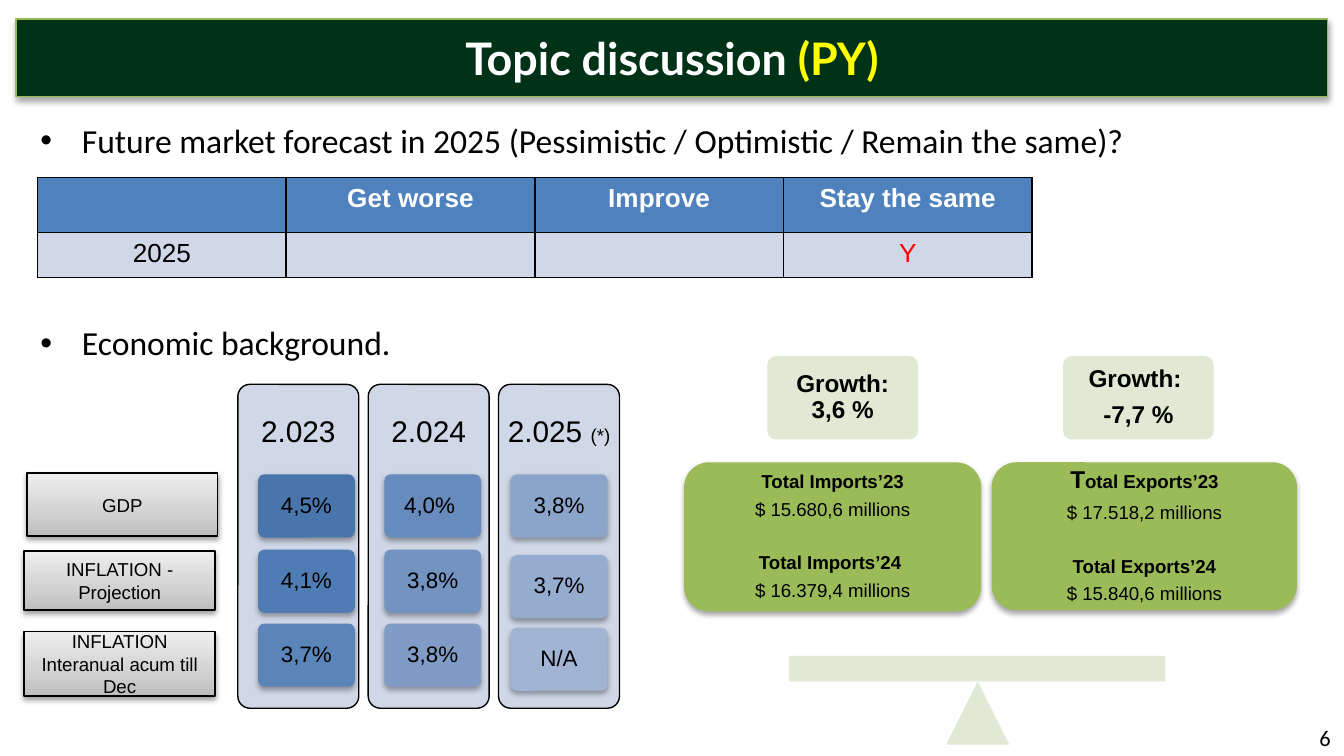
import pptx
import pptx.dml.color
import pptx.enum.shapes
import pptx.enum.text
import pptx.oxml
import pptx.oxml.ns
import pptx.util
import copy
from lxml import etree

RGB = pptx.dml.color.RGBColor
Pt = pptx.util.Pt
qn = pptx.oxml.ns.qn
KIND = pptx.enum.shapes.MSO_SHAPE
ALIGN = pptx.enum.text.PP_ALIGN
ANCHOR = pptx.enum.text.MSO_ANCHOR

PX = 9144  # 100 px to the inch
BLACK = RGB(0, 0, 0)
WHITE = RGB(255, 255, 255)
YELLOW = RGB(255, 255, 0)
RED = RGB(255, 0, 0)
DARK_GREEN = RGB(0x00, 0x32, 0x17)
EDGE_GREEN = RGB(0x98, 0xB9, 0x55)
PAN_GREEN = RGB(0x9B, 0xBB, 0x59)
PALE_GREEN = RGB(0xDE, 0xE7, 0xD1)
HEADER_BLUE = RGB(0x4F, 0x81, 0xBD)
PALE_BLUE = RGB(0xD0, 0xD8, 0xE8)
LABEL_GREYS = [RGB(0xBD, 0xBD, 0xBD), RGB(0xD1, 0xD1, 0xD1), RGB(0xEE, 0xEE, 0xEE)]


def add_run(paragraph, text, size=10, color=BLACK, bold=False, name="Arial"):
    run = paragraph.add_run()
    run.text = text
    for key, value in {"size": Pt(size), "bold": bold, "name": name}.items():
        setattr(run.font, key, value)
    run.font.color.rgb = color


def add_box(kind, at, fill, line=None, inset=5, corner=None):
    """Add a preset shape with middle-anchored, centred text and no shadow."""
    box = slide.shapes.add_shape(kind, *[v * PX for v in at])
    box.shadow.inherit = False
    if corner:
        box.adjustments[0] = corner
    box.fill.solid()
    box.fill.fore_color.rgb = fill
    if line is None:
        box.line.fill.background()
    else:
        box.line.color.rgb = line
        box.line.width = Pt(0.75)
    frame = box.text_frame
    frame.word_wrap = True
    frame.vertical_anchor = ANCHOR.MIDDLE
    for side in ("left", "top", "right", "bottom"):
        setattr(frame, "margin_" + side, inset * PX)
    frame.paragraphs[0].alignment = ALIGN.CENTER
    return box


deck = pptx.Presentation()
deck.slide_width = 1000 * PX
deck.slide_height = deck.slide_width * 9 // 16
slide = deck.slides.add_slide(deck.slide_layouts[1])
title, topics = slide.placeholders
for holder, at in ((title, (12, 14, 976, 58)), (topics, (20, 84, 961, 613))):
    holder.left, holder.top, holder.width, holder.height = [v * PX for v in at]
    holder.text_frame.auto_size = pptx.enum.text.MSO_AUTO_SIZE.NONE
shadowed = [(title, 35, 1.8)]

# Title bar
title.fill.solid()
title.fill.fore_color.rgb = DARK_GREEN
title.line.color.rgb = EDGE_GREEN
title.line.width = Pt(0.75)
heading = title.text_frame
heading.vertical_anchor = ANCHOR.MIDDLE
for side in ("left", "top", "right", "bottom"):
    setattr(heading, "margin_" + side, 0)
heading.paragraphs[0].alignment = ALIGN.CENTER
for text, color in (("Topic discussion ", WHITE), ("(PY)", YELLOW)):
    add_run(heading.paragraphs[0], text, 24, color, True, "Lato")

# Topics
topics.text_frame.vertical_anchor = ANCHOR.TOP
for i, (text, gap) in enumerate((
        ("Future market forecast in 2025 (Pessimistic / Optimistic / Remain the same)?", 0),
        ("Economic background.", 87))):
    topic = topics.text_frame.add_paragraph() if i else topics.text_frame.paragraphs[0]
    topic.space_before = Pt(gap)
    properties = topic._p.get_or_add_pPr()
    properties.set("marL", str(31 * PX))
    properties.set("indent", str(-31 * PX))
    add_run(topic, text, 18, name="Calibri")

# Page number
page_number = slide.shapes.add_textbox(767 * PX, 534 * PX, 233 * PX, 30 * PX).text_frame
page_number.word_wrap = True
page_number.paragraphs[0].alignment = ALIGN.RIGHT
add_run(page_number.paragraphs[0], "6", 12, name="Calibri")

# Forecast table
forecast = slide.shapes.add_table(2, 4, 28 * PX, 132 * PX, 740 * PX, 74 * PX).table
for column in forecast.columns:
    column.width = 185 * PX
for row, height in zip(forecast.rows, (41, 33)):
    row.height = height * PX
answers = [["", "Get worse", "Improve", "Stay the same"], ["2025", "", "", "Y"]]
for r, row in enumerate(answers):
    for c, text in enumerate(row):
        cell = forecast.cell(r, c)
        entry = cell.text_frame.paragraphs[0]
        entry.alignment = ALIGN.CENTER
        if text:
            color = WHITE if r == 0 else RED if text == "Y" else BLACK
            add_run(entry, text, 14, color, r == 0)
        else:
            etree.SubElement(entry._p, qn("a:endParaRPr"), sz="1400")
        properties = cell._tc.get_or_add_tcPr()
        for edge in ("lnL", "lnR", "lnT", "lnB"):
            border = etree.SubElement(properties, qn("a:" + edge), w="12700")
            paint = etree.SubElement(border, qn("a:solidFill"))
            etree.SubElement(paint, qn("a:srgbClr"), val=str(BLACK))
        cell.fill.solid()
        cell.fill.fore_color.rgb = PALE_BLUE if r else HEADER_BLUE

# Row labels
for text, x, y, height in (("GDP", 20, 352, 47),
                           ("INFLATION - Projection", 18, 410, 44),
                           ("INFLATION Interanual acum till Dec", 18, 470, 48)):
    label = add_box(KIND.RECTANGLE, (x, y, 142, height), PALE_BLUE, BLACK)
    label.text_frame.margin_left = label.text_frame.margin_right = 10 * PX
    label.fill.gradient()
    label.fill.gradient_angle = 90
    first = label._element.spPr.find(".//" + qn("a:gs"))
    first.addnext(copy.deepcopy(first))
    for stop, grey, position in zip(label.fill.gradient_stops, LABEL_GREYS, (0, 0.35, 1)):
        stop.color.rgb = grey
        stop.position = position
    add_run(label.text_frame.paragraphs[0], text)
    shadowed.append((label, 38, 1.6))

# Year columns with their indicator tiles: (value, top, fill)
years = [
    ("2.023", "", 192, [("4,5%", 353, "4875AC"), ("4,1%", 409, "4F7CB4"), ("3,7%", 464, "5B84B9")]),
    ("2.024", "", 286, [("4,0% ", 353, "678BBD"), ("3,8%", 409, "7393C1"), ("3,8%", 464, "7F9BC6")]),
    ("2.025 ", "(*)", 380, [("3,8%", 353, "8BA4CA"), ("3,7%", 413, "96ACCF"), ("N/A", 467, "A2B4D4")]),
]
for i, (year, mark, tile_x, tiles) in enumerate(years):
    column = add_box(KIND.ROUNDED_RECTANGLE, (177 + 97 * i, 286, 90, 241),
                     PALE_BLUE, BLACK, inset=3, corner=0.1)
    column.text_frame.margin_bottom = 172 * PX
    year_line = column.text_frame.paragraphs[0]
    year_line.line_spacing = 0.9
    add_run(year_line, year, 16)
    if mark:
        add_run(year_line, mark, 10)
    for value, y, fill in tiles:
        tile = add_box(KIND.ROUNDED_RECTANGLE, (tile_x, y, 72, 47),
                       RGB.from_string(fill), inset=4, corner=0.1)
        tile.text_frame.paragraphs[0].line_spacing = 0.9
        add_run(tile.text_frame.paragraphs[0], value, 12)
        shadowed.append((tile, 35, 1.8))

# Trade balance scale
growth_imports = add_box(KIND.ROUNDED_RECTANGLE, (571, 265, 112, 62), PALE_GREEN, inset=7, corner=0.1)
growth_exports = add_box(KIND.ROUNDED_RECTANGLE, (791, 265, 112, 62), PALE_GREEN, inset=7, corner=0.1)
pivot = add_box(KIND.ISOSCELES_TRIANGLE, (704, 507, 47, 47), PALE_GREEN)
beam = add_box(KIND.RECTANGLE, (587, 488, 280, 19), PALE_GREEN)
for part in (growth_imports, growth_exports, pivot, beam):
    tint = part._element.spPr.find(qn("a:solidFill")).find(qn("a:srgbClr"))
    etree.SubElement(tint, qn("a:alpha"), val="90000")
imports = add_box(KIND.ROUNDED_RECTANGLE, (509, 344, 221, 111), PAN_GREEN)
exports = add_box(KIND.ROUNDED_RECTANGLE, (738, 344, 227, 110), PAN_GREEN)
shadowed += [(imports, 35, 1.8), (exports, 35, 1.8)]

# Lines of text: gap above, then runs of (text, size, bold)
scale_text = [
    (growth_imports, [(0, [("Growth: 3,6 %", 13, True)])]),
    (growth_exports, [(0, [("Growth: ", 13, True)]), (5, [("-7,7 %", 13, True)])]),
    (imports, [(0, [("Total Imports’23", 10, True)]),
               (4, [("$ 15.680,6 millions", 10, False)]),
               (18, [("Total Imports’24 ", 10, True)]),
               (4, [("$ 16.379,4 millions", 10, False)])]),
    (exports, [(0, [("T", 13, True), ("otal Exports’23", 10, True)]),
               (5, [("$ 17.518,2 millions", 10, False)]),
               (18, [("Total Exports’24", 10, True)]),
               (4, [("$ 15.840,6 millions", 10, False)])]),
]
for part, lines in scale_text:
    for i, (gap, runs) in enumerate(lines):
        line = part.text_frame.add_paragraph() if i else part.text_frame.paragraphs[0]
        line.alignment = ALIGN.CENTER
        line.line_spacing = 0.9
        line.space_before = Pt(gap)
        for text, size, bold in runs:
            add_run(line, text, size, bold=bold)

# Soft shadows below
for part, opacity, distance in shadowed:
    part.shadow.inherit = False
    effects = part._element.spPr.find(qn("a:effectLst"))
    shade = etree.SubElement(effects, qn("a:outerShdw"), blurRad=str(Pt(3.1)),
                             dist=str(Pt(distance)), dir="5400000", rotWithShape="0")
    ink = etree.SubElement(shade, qn("a:srgbClr"), val=str(BLACK))
    etree.SubElement(ink, qn("a:alpha"), val=str(opacity * 1000))

deck.save("out.pptx")
